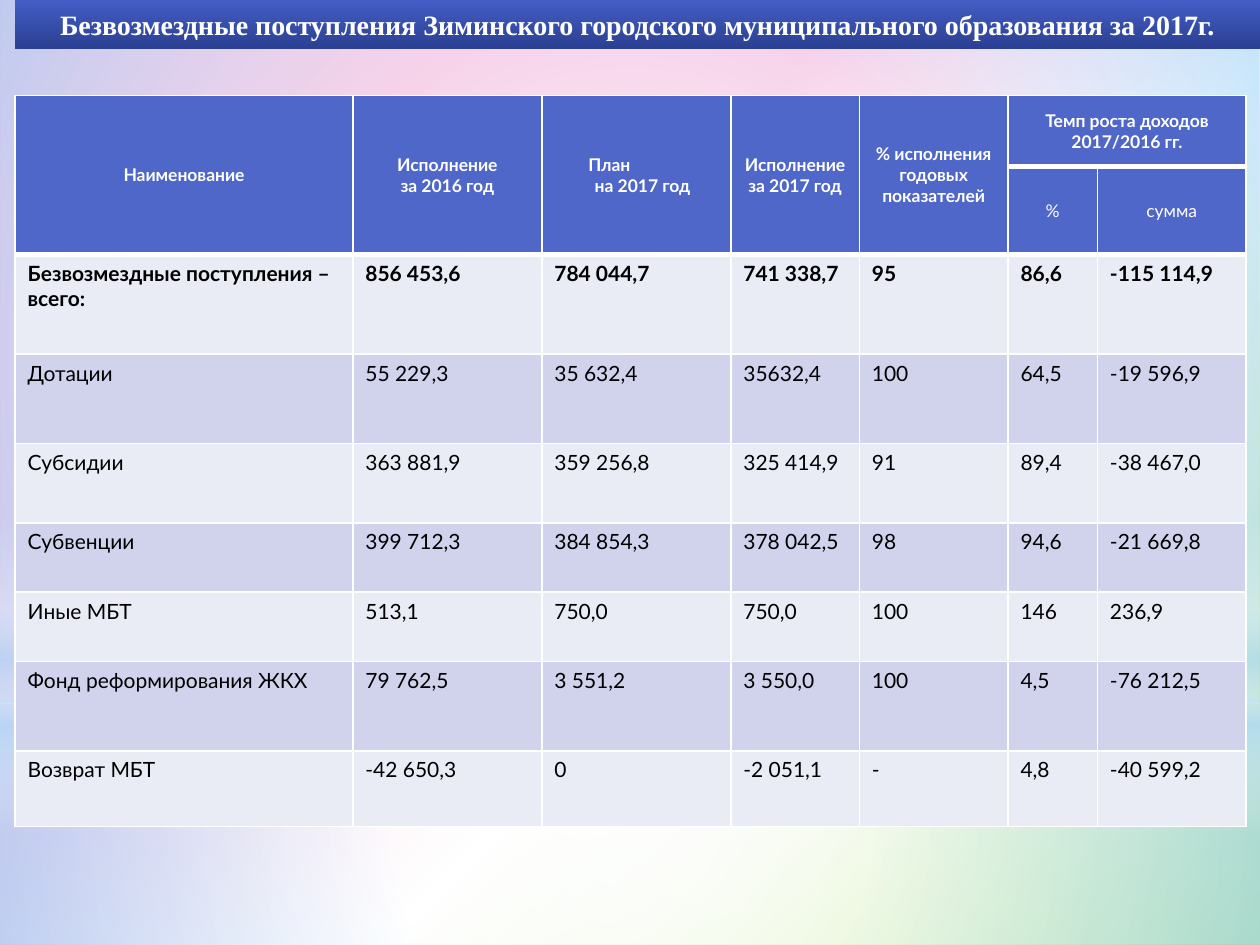
"""Build a slide with a table of gratuitous receipts for 2017."""
from lxml import etree
from pptx import Presentation
from pptx.dml.color import RGBColor
from pptx.enum.shapes import MSO_SHAPE
from pptx.enum.text import MSO_ANCHOR, PP_ALIGN
from pptx.oxml.ns import qn
from pptx.util import Inches, Pt

RECT, OVAL = MSO_SHAPE.RECTANGLE, MSO_SHAPE.OVAL
MIDDLE, TOP = MSO_ANCHOR.MIDDLE, MSO_ANCHOR.TOP
CENTER, LEFT = PP_ALIGN.CENTER, PP_ALIGN.LEFT
THEME = {
    "white": "FFFFFF", "black": "000000", "sky": "B4DCFA", "pink": "EA8AC8",
    "lime": "81D31A", "blue": "435EC5", "navy": "2B4092", "head": "4E67C8",
    "light": "E9EBF5", "dark": "D0D3EB",
    "title": 16, "label": 10, "body": 12,
    "serif": "Times New Roman", "sans": "Lato",
}


def blend(node, stops, angle=None):
    """Replace a solid fill with a gradient, circular if no angle is given."""
    grad = etree.Element(qn("a:gradFill"), rotWithShape="1")
    group = etree.SubElement(grad, qn("a:gsLst"))
    for place, name, alpha in stops:
        stop = etree.SubElement(group, qn("a:gs"), pos=str(place * 1000))
        color = etree.SubElement(stop, qn("a:srgbClr"), val=THEME[name])
        if alpha < 100:
            etree.SubElement(color, qn("a:alpha"), val=str(alpha * 1000))
    if angle is None:
        path = etree.SubElement(grad, qn("a:path"), path="circle")
        etree.SubElement(path, qn("a:fillToRect"), l="50000", t="50000", r="50000", b="50000")
    else:
        etree.SubElement(grad, qn("a:lin"), ang=str(angle * 60000), scaled="0")
    node.getparent().replace(node, grad)


def style(para, size, face, color, bold):
    """Format all runs of a paragraph."""
    for run in para.runs:
        run.font.size = Pt(THEME[size])
        run.font.name = THEME[face]
        run.font.color.rgb = RGBColor.from_string(THEME[color])
        run.font.bold = bold


deck = Presentation()
deck.slide_width, deck.slide_height = Inches(10), Inches(7.5)
slide = deck.slides.add_slide(deck.slide_layouts[6])
slide.background.fill.solid()
blend(slide.element.xpath(".//p:bgPr/a:solidFill")[0],
      [(39, "pink", 100), (60, "white", 100), (100, "lime", 100)], 45)

layers = [
    (RECT, (0, 5.58, 10, 1.92), [(0, "white", 91), (37, "white", 76), (100, "sky", 79)], None),
    (RECT, (0, 0, 10, 5.58), [(0, "white", 89), (48, "white", 62), (100, "sky", 79)], None),
    (RECT, (0, 4.12, 10, 2.5), [(0, "white", 0), (29, "white", 30), (45, "sky", 40),
                               (55, "white", 26), (65, "sky", 60), (100, "white", 0)], 90),
    (OVAL, (0, 1.75, 10, 5.58), [(0, "white", 100), (56, "white", 0)], None),
    (RECT, (0.12, 0, 9.88, 0.39), [(0, "blue", 100), (100, "navy", 100)], 90),
]
for kind, box, stops, angle in layers:
    shape = slide.shapes.add_shape(kind, *map(Inches, box))
    shape.shadow.inherit = False
    shape.line.fill.background()
    shape.fill.solid()
    blend(shape.element.xpath("./p:spPr/a:solidFill")[0], stops, angle)

title = shape.text_frame
title.text = "Безвозмездные поступления Зиминского городского муниципального образования за 2017г."
title.word_wrap = False
title.vertical_anchor = MIDDLE
title.paragraphs[0].alignment = CENTER
style(title.paragraphs[0], "title", "serif", "white", True)

widths = [2.68, 1.5, 1.5, 1.02, 1.18, 0.71, 1.18]
heights = [0.56, 0.7, 0.79, 0.71, 0.63, 0.55, 0.55, 0.71, 0.6]
rows = [
    ["Наименование", "Исполнение\nза 2016 год", "План\nна 2017 год",
     "Исполнение за 2017 год", "% исполнения годовых показателей",
     "Темп роста доходов 2017/2016 гг.", ""],
    ["", "", "", "", "", "%", "сумма"],
    ["Безвозмездные поступления –всего:", "856 453,6", "784 044,7", "741 338,7", "95", "86,6", "-115 114,9"],
    ["Дотации", "55 229,3", "35 632,4", "35632,4", "100", "64,5", "-19 596,9"],
    ["Субсидии", "363 881,9", "359 256,8", "325 414,9", "91", "89,4", "-38 467,0"],
    ["Субвенции", "399 712,3", "384 854,3", "378 042,5", "98", "94,6", "-21 669,8"],
    ["Иные МБТ", "513,1", "750,0", "750,0", "100", "146", "236,9"],
    ["Фонд реформирования ЖКХ", "79 762,5", "3 551,2", "3 550,0", "100", "4,5", "-76 212,5"],
    ["Возврат МБТ", "-42 650,3", "0", "-2 051,1", "-", "4,8", "-40 599,2"],
]
frame = slide.shapes.add_table(len(rows), len(widths), Inches(0.12), Inches(0.76),
                               Inches(sum(widths)), Inches(sum(heights)))
table = frame.table
table.first_row = table.horz_banding = False
for col, width in zip(table.columns, widths):
    col.width = Inches(width)
for row, height in zip(table.rows, heights):
    row.height = Inches(height)
for c in range(5):
    table.cell(0, c).merge(table.cell(1, c))
table.cell(0, 5).merge(table.cell(0, 6))

for r, texts in enumerate(rows):
    head = r < 2
    edges = {"lnL": 1, "lnR": 1, "lnT": 3 if r in (1, 2) else 1, "lnB": 3 if head else 1}
    shade = "head" if head else ("light", "dark")[r % 2]
    for c, text in enumerate(texts):
        cell = table.cell(r, c)
        props = cell._tc.get_or_add_tcPr()
        for edge, width in edges.items():
            line = etree.SubElement(props, qn("a:" + edge), w=str(Pt(width)))
            fill = etree.SubElement(line, qn("a:solidFill"))
            etree.SubElement(fill, qn("a:srgbClr"), val=THEME["white"])
        cell.fill.solid()
        cell.fill.fore_color.rgb = RGBColor.from_string(THEME[shade])
        cell.vertical_anchor = MIDDLE if head else TOP
        if not text:
            continue
        cell.text_frame.text = text
        for para in cell.text_frame.paragraphs:
            para.alignment = CENTER if head else LEFT
            style(para, "label" if head else "body", "sans",
                  "white" if head else "black", r in (0, 2))

for para, indent in zip(table.cell(0, 2).text_frame.paragraphs, (0.27, 0.32)):
    para.alignment = LEFT
    para._p.get_or_add_pPr().set("marL", str(Inches(indent)))

deck.save("out.pptx")
